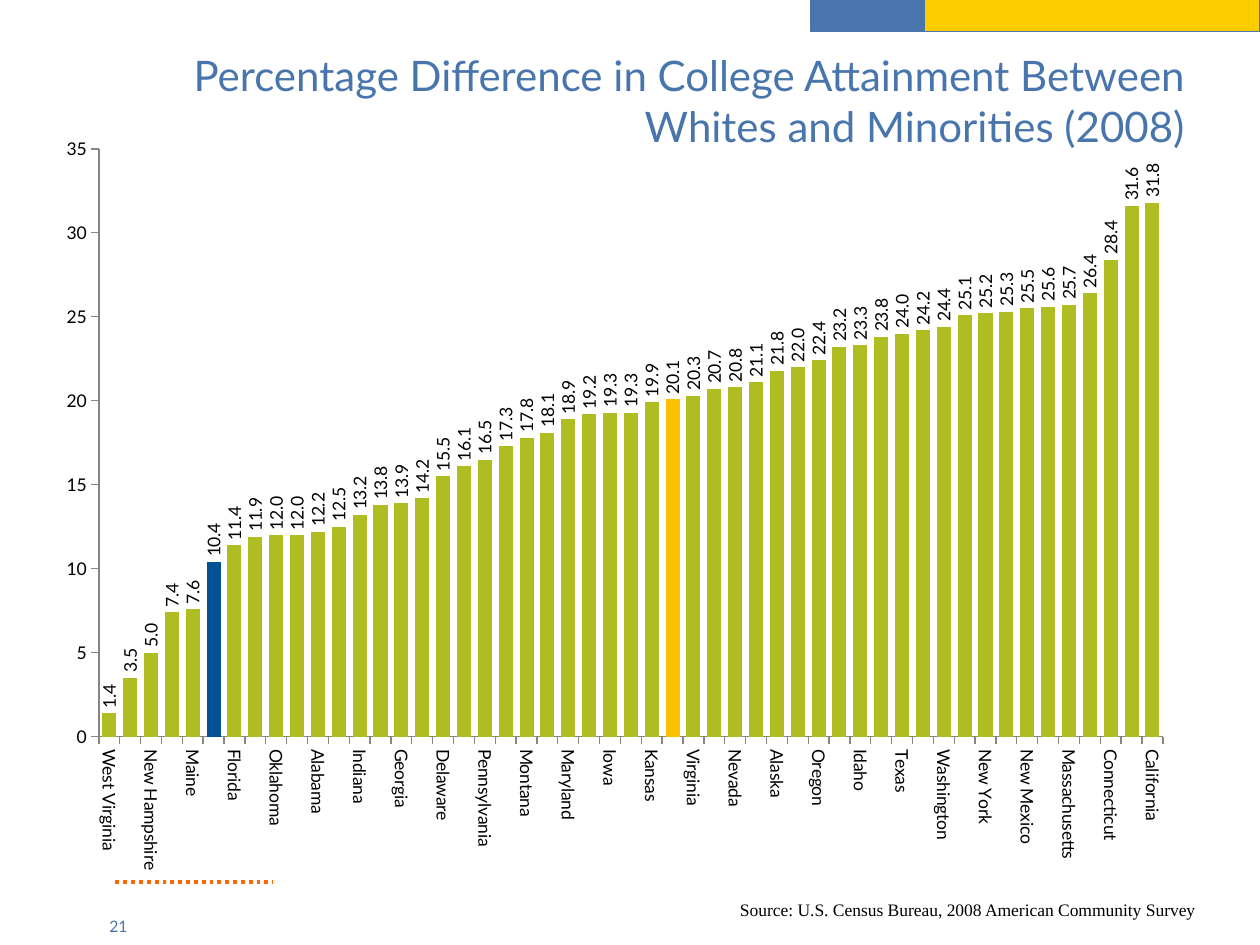
from lxml import etree
from pptx import Presentation
from pptx.chart.data import CategoryChartData
from pptx.dml.color import RGBColor
from pptx.enum.chart import XL_CHART_TYPE as ChartType
from pptx.enum.chart import XL_LABEL_POSITION as LabelPosition
from pptx.enum.chart import XL_TICK_MARK as TickMark
from pptx.enum.dml import MSO_LINE as LineStyle
from pptx.enum.shapes import MSO_CONNECTOR as Connector
from pptx.enum.shapes import MSO_SHAPE as Shape
from pptx.enum.text import MSO_ANCHOR as Anchor
from pptx.enum.text import PP_ALIGN as Align
from pptx.oxml import parse_xml
from pptx.oxml.ns import nsdecls, qn
from pptx.util import Pt

BLUE = RGBColor(0x49, 0x75, 0xAD)
YELLOW = RGBColor(0xFF, 0xCC, 0x00)
ORANGE = RGBColor(0xFF, 0x66, 0x00)
GREEN = RGBColor(0xAF, 0xBD, 0x22)
DARK_BLUE = RGBColor(0x00, 0x52, 0x95)
GOLD = RGBColor(0xFF, 0xC0, 0x00)
GRAY = RGBColor(0x86, 0x86, 0x86)
BLACK = RGBColor(0, 0, 0)
WHITE = RGBColor(0xFF, 0xFF, 0xFF)

SANS, SERIF = "Lato", "Times New Roman"
QUARTER_TURN = 5400000

# Gap in percentage points, from the smallest to the largest
GAPS = {
    "West Virginia": 1.4, "Vermont": 3.5, "New Hampshire": 5.0,
    "Kentucky": 7.4, "Maine": 7.6, "Arkansas": 10.4, "Florida": 11.4,
    "Tennessee": 11.9, "Oklahoma": 12.0, "Ohio": 12.0, "Alabama": 12.2,
    "Missouri": 12.5, "Indiana": 13.2, "Louisiana": 13.8, "Georgia": 13.9,
    "Mississippi": 14.2, "Delaware": 15.5, "Michigan": 16.1,
    "Pennsylvania": 16.5, "Hawaii": 17.3, "Montana": 17.8,
    "South Dakota": 18.1, "Maryland": 18.9, "North Carolina": 19.2,
    "Iowa": 19.3, "South Carolina": 19.3, "Kansas": 19.9,
    "United States": 20.1, "Virginia": 20.3, "Wisconsin": 20.7,
    "Nevada": 20.8, "Minnesota": 21.1, "Alaska": 21.8, "Wyoming": 22.0,
    "Oregon": 22.4, "Illinois": 23.2, "Idaho": 23.3, "Utah": 23.8,
    "Texas": 24.0, "New Jersey": 24.2, "Washington": 24.4,
    "North Dakota": 25.1, "New York": 25.2, "Rhode Island": 25.3,
    "New Mexico": 25.5, "Arizona": 25.6, "Massachusetts": 25.7,
    "Nebraska": 26.4, "Connecticut": 28.4, "Colorado": 31.6,
    "California": 31.8,
}
HIGHLIGHTS = {"Arkansas": DARK_BLUE, "United States": GOLD}


def style_font(font, name, size, color):
    font.name = name
    font.size = Pt(size)
    font.color.rgb = color


def set_text(frame, text, name, size, color, align):
    frame.word_wrap = True
    frame.text = text
    para = frame.paragraphs[0]
    para.alignment = align
    style_font(para.runs[0].font, name, size, color)


def add_text(slide, text, left, top, width, height, name, size, color, align):
    box = slide.shapes.add_textbox(Pt(left), Pt(top), Pt(width), Pt(height))
    set_text(box.text_frame, text, name, size, color, align)


def add_band(slide, left, width, fill):
    band = slide.shapes.add_shape(Shape.RECTANGLE, Pt(left), Pt(-0.7), Pt(width), Pt(18.7))
    band.shadow.inherit = False
    band.fill.solid()
    band.fill.fore_color.rgb = fill
    band.line.color.rgb = BLUE
    band.line.width = Pt(0.75)


def add_dotted_line(slide, left, right, top):
    line = slide.shapes.add_connector(Connector.STRAIGHT, Pt(left), Pt(top), Pt(right), Pt(top))
    line.line.color.rgb = ORANGE
    line.line.width = Pt(2.25)
    line.line.dash_style = LineStyle.ROUND_DOT
    etree.SubElement(line._element.spPr, qn("a:effectLst"))


def set_title(slide, text):
    title = slide.shapes.title
    title.left, title.top, title.width, title.height = Pt(36), Pt(19.4), Pt(648), Pt(75.6)
    title.text_frame.vertical_anchor = Anchor.MIDDLE
    set_text(title.text_frame, text, SANS, 24, BLUE, Align.RIGHT)


def turn_text(owner, angle):
    """Rotate the text of an axis or of data labels."""
    body = owner._element.find(qn("c:txPr")).find(qn("a:bodyPr"))
    body.set("rot", str(angle))
    body.set("vert", "horz")


def set_plot_area(chart, x, y, w, h):
    """Fix the inner plot area, in fractions of the chart."""
    area = chart._chartSpace.chart.plotArea
    for old in area.findall(qn("c:layout")):
        area.remove(old)
    edges = "".join(f'<c:{tag} val="{value}"/>'
                    for tag, value in zip("xywh", (x, y, w, h)))
    area.insert(0, parse_xml(
        f'<c:layout {nsdecls("c")}><c:manualLayout><c:layoutTarget val="inner"/>'
        f'<c:xMode val="edge"/><c:yMode val="edge"/>{edges}'
        '</c:manualLayout></c:layout>'))


def format_axes(chart):
    states, scale = chart.category_axis, chart.value_axis
    for axis in (states, scale):
        axis.major_tick_mark = TickMark.OUTSIDE
        axis.minor_tick_mark = TickMark.NONE
        axis.format.line.color.rgb = GRAY
        style_font(axis.tick_labels.font, SANS, 10, BLACK)
    # Name every second state, reading downwards
    turn_text(states, QUARTER_TURN)
    last = states._element.find(qn("c:noMultiLvlLbl"))
    for tag, step in (("tickLblSkip", 2), ("tickMarkSkip", 1)):
        last.addprevious(parse_xml(f'<c:{tag} {nsdecls("c")} val="{step}"/>'))
    scale.minimum_scale, scale.maximum_scale, scale.major_unit = 0, 35, 5
    scale.tick_labels.number_format = "0"
    scale.tick_labels.number_format_is_linked = False
    scale.major_gridlines.format.line.color.rgb = WHITE
    scale.major_gridlines.format.line.width = Pt(0.75)


def add_gap_chart(slide):
    data = CategoryChartData(number_format="0.0")
    data.categories = list(GAPS)
    data.add_series("Series 1", list(GAPS.values()))
    chart = slide.shapes.add_chart(ChartType.COLUMN_CLUSTERED, Pt(23.8), Pt(72),
                                   Pt(653.8), Pt(436.3), data).chart
    chart.has_legend = False
    chart.has_title = False
    style_font(chart.font, SANS, 10, BLACK)
    set_plot_area(chart, 0.05, 0.03, 0.93, 0.77)
    format_axes(chart)

    # Columns
    plot = chart.plots[0]
    plot.gap_width = 49
    plot.vary_by_categories = False
    series = plot.series[0]
    series.format.fill.solid()
    series.format.fill.fore_color.rgb = GREEN
    for place, color in HIGHLIGHTS.items():
        fill = series.points[list(GAPS).index(place)].format.fill
        fill.solid()
        fill.fore_color.rgb = color

    # Values above the columns, reading upwards
    labels = series.data_labels
    labels.show_value = True
    labels.number_format = "0.0"
    labels.number_format_is_linked = False
    labels.position = LabelPosition.OUTSIDE_END
    style_font(labels.font, SANS, 10, BLACK)
    turn_text(labels, -QUARTER_TURN)


def main():
    deck = Presentation()
    deck.slide_width, deck.slide_height = Pt(720), Pt(540)
    slide = deck.slides.add_slide(deck.slide_layouts[5])

    # Page decoration
    add_dotted_line(slide, 66, 156, 504)
    add_band(slide, 463, 65.5, BLUE)
    add_band(slide, 528, 192, YELLOW)

    # Content
    add_gap_chart(slide)
    set_title(slide, "Percentage Difference in College Attainment Between "
                     "Whites and Minorities (2008)")

    # Footer
    add_text(slide, "Source: U.S. Census Bureau, 2008 American Community Survey",
             372, 510, 318, 19.4, SERIF, 10, BLACK, Align.RIGHT)
    add_text(slide, "21", 55.4, 520.6, 72, 19.4, SANS, 9, BLUE, Align.LEFT)

    deck.save("out.pptx")


if __name__ == "__main__":
    main()
